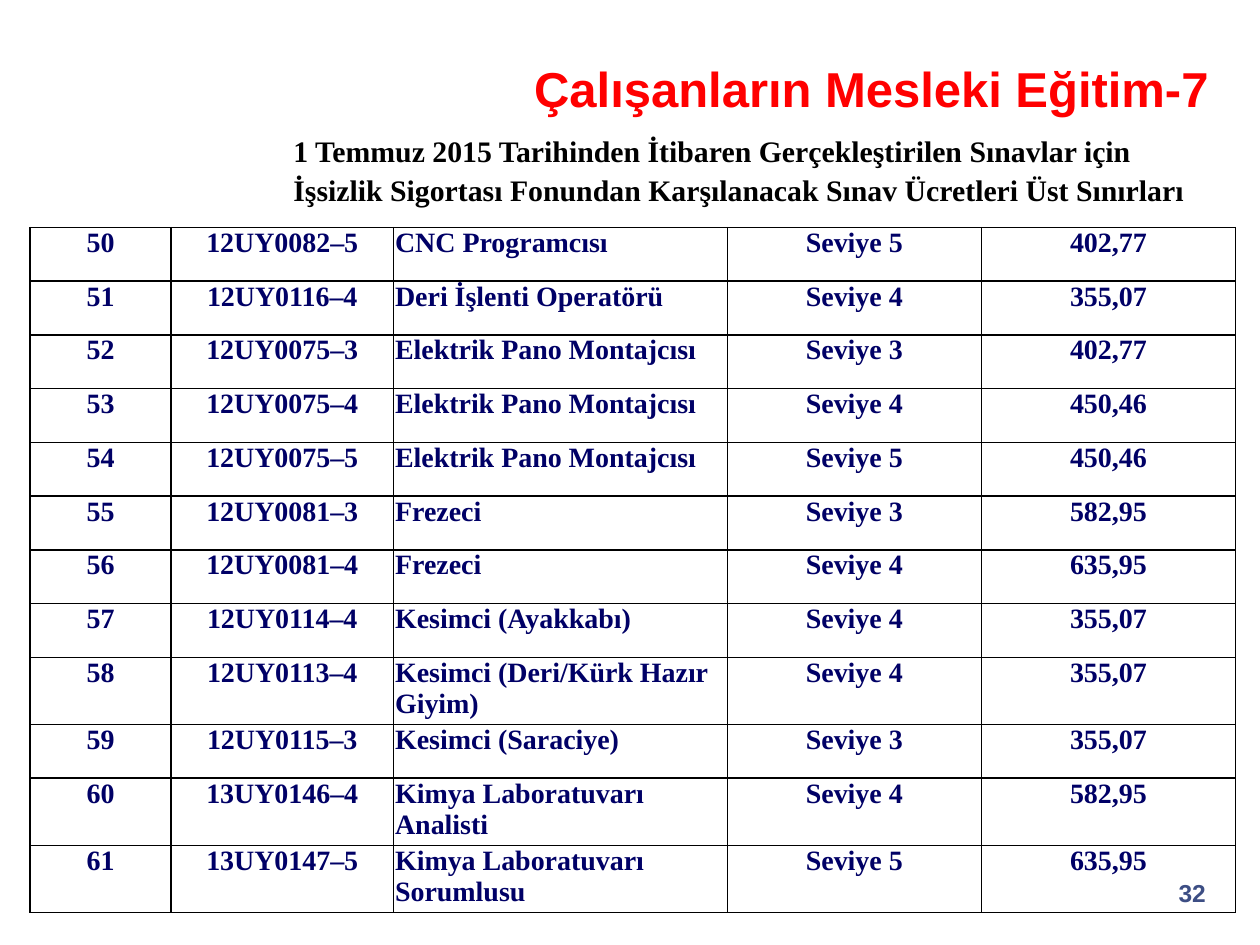
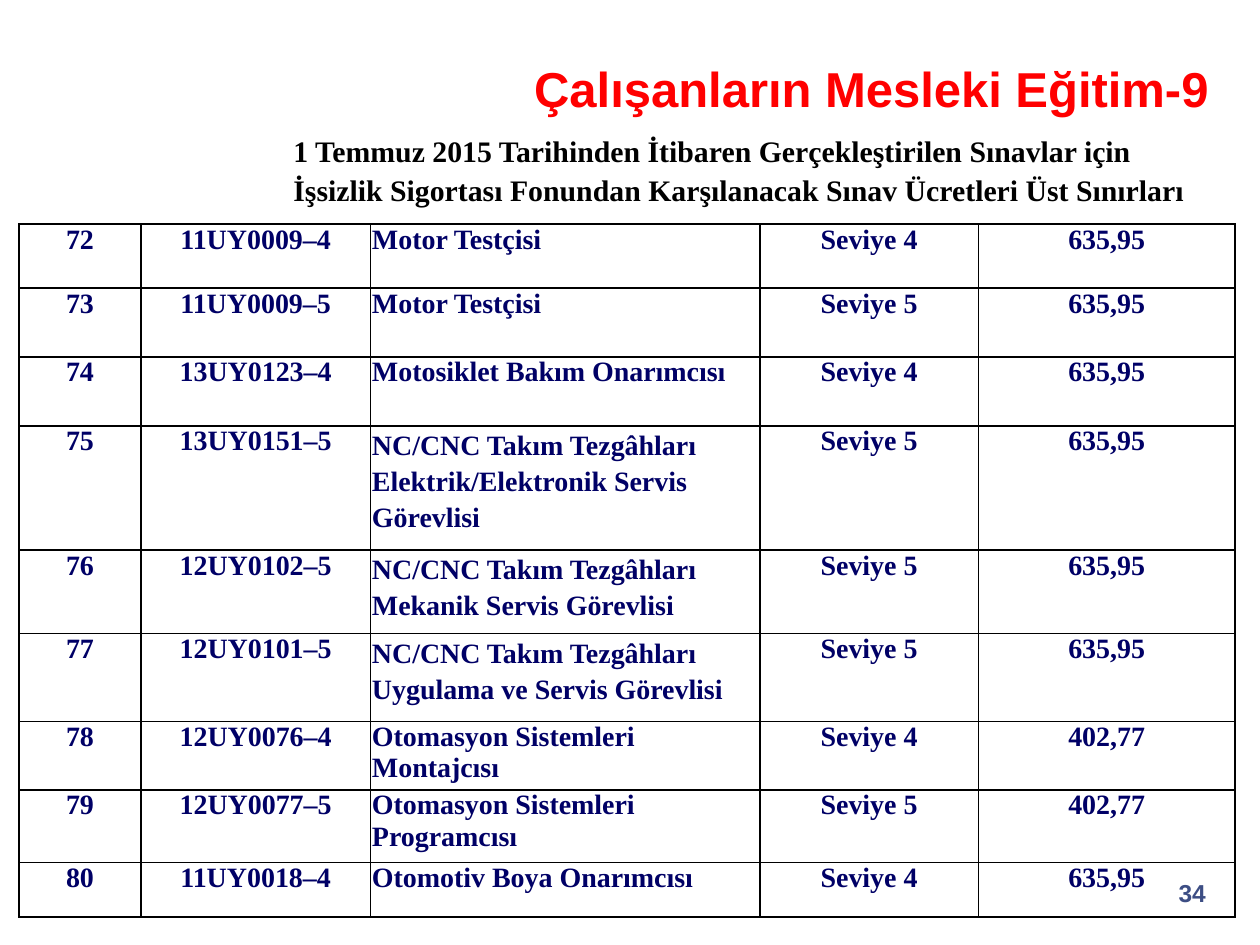
from dataclasses import dataclass

from lxml.etree import SubElement
from pptx import Presentation
from pptx.dml.color import RGBColor
from pptx.enum.text import MSO_ANCHOR, PP_ALIGN
from pptx.oxml.ns import qn
from pptx.slide import Slide
from pptx.table import _Cell
from pptx.text.text import TextFrame
from pptx.util import Pt

RED = RGBColor(0xFF, 0x00, 0x00)
BLACK = RGBColor(0x00, 0x00, 0x00)
NAVY = RGBColor(0x00, 0x00, 0x66)
SLATE = RGBColor(0x3D, 0x4E, 0x84)
SANS = "Arial"
SERIF = "Times New Roman"
SUBTITLE = (
    "1 Temmuz 2015 Tarihinden İtibaren Gerçekleştirilen Sınavlar için "
    "İşsizlik Sigortası Fonundan Karşılanacak Sınav Ücretleri Üst Sınırları"
)
JOB_COLUMN = 2


@dataclass(frozen=True)
class Exam:
    number: int
    code: str
    job: str
    level: int
    fee: str
    height: float = 30.7
    job_spacing: float = 1.0

    def texts(self) -> list[str]:
        return [str(self.number), self.code, self.job, f"Seviye {self.level}", self.fee]


@dataclass(frozen=True)
class FeePage:
    title_number: int
    page_number: int
    left: float
    top: float
    widths: list[float]
    exams: list[Exam]


PAGES = [
    FeePage(7, 32, 17.2, 130, [80.6, 127, 190.8, 145.2, 145.2], [
        Exam(50, "12UY0082–5", "CNC Programcısı", 5, "402,77"),
        Exam(51, "12UY0116–4", "Deri İşlenti Operatörü", 4, "355,07"),
        Exam(52, "12UY0075–3", "Elektrik Pano Montajcısı", 3, "402,77"),
        Exam(53, "12UY0075–4", "Elektrik Pano Montajcısı", 4, "450,46"),
        Exam(54, "12UY0075–5", "Elektrik Pano Montajcısı", 5, "450,46"),
        Exam(55, "12UY0081–3", "Frezeci", 3, "582,95"),
        Exam(56, "12UY0081–4", "Frezeci", 4, "635,95"),
        Exam(57, "12UY0114–4", "Kesimci (Ayakkabı)", 4, "355,07"),
        Exam(58, "12UY0113–4", "Kesimci (Deri/Kürk Hazır Giyim)", 4, "355,07", 38.4),
        Exam(59, "12UY0115–3", "Kesimci (Saraciye)", 3, "355,07"),
        Exam(60, "13UY0146–4", "Kimya Laboratuvarı Analisti", 4, "582,95", 38.4),
        Exam(61, "13UY0147–5", "Kimya Laboratuvarı Sorumlusu", 5, "635,95", 38.4),
    ]),
    FeePage(9, 34, 10.8, 128, [69.8, 131, 222.6, 125, 146.5], [
        Exam(72, "11UY0009–4", "Motor Testçisi", 4, "635,95", 36.6),
        Exam(73, "11UY0009–5", "Motor Testçisi", 5, "635,95", 39.4),
        Exam(74, "13UY0123–4", "Motosiklet Bakım Onarımcısı", 4, "635,95", 39.4),
        Exam(75, "13UY0151–5", "NC/CNC Takım Tezgâhları Elektrik/Elektronik Servis Görevlisi",
             5, "635,95", 71, 1.15),
        Exam(76, "12UY0102–5", "NC/CNC Takım Tezgâhları Mekanik Servis Görevlisi",
             5, "635,95", 47.8, 1.15),
        Exam(77, "12UY0101–5", "NC/CNC Takım Tezgâhları Uygulama ve Servis Görevlisi",
             5, "635,95", 50.3, 1.15),
        Exam(78, "12UY0076–4", "Otomasyon Sistemleri Montajcısı", 4, "402,77", 39),
        Exam(79, "12UY0077–5", "Otomasyon Sistemleri Programcısı", 5, "402,77", 41.5),
        Exam(80, "11UY0018–4", "Otomotiv Boya Onarımcısı", 4, "635,95", 31),
    ]),
]


def write(frame: TextFrame, text: str, *, size: float, font: str, color: RGBColor,
          align: PP_ALIGN = PP_ALIGN.LEFT, spacing: float = 1.0) -> None:
    frame.word_wrap = True
    paragraph = frame.paragraphs[0]
    paragraph.alignment = align
    paragraph.line_spacing = spacing
    run = paragraph.add_run()
    run.text = text
    run.font.size = Pt(size)
    run.font.name = font
    run.font.bold = True
    run.font.color.rgb = color


def add_frame(slide: Slide, left: float, top: float, width: float, height: float) -> TextFrame:
    return slide.shapes.add_textbox(Pt(left), Pt(top), Pt(width), Pt(height)).text_frame


def outline(cell: _Cell) -> None:
    properties = cell._tc.get_or_add_tcPr()
    for side in ("a:lnL", "a:lnR", "a:lnT", "a:lnB"):
        border = SubElement(properties, qn(side), w=str(Pt(1)))
        fill = SubElement(border, qn("a:solidFill"))
        SubElement(fill, qn("a:srgbClr"), val=str(BLACK))


def format_cell(cell: _Cell, text: str, is_job: bool, spacing: float) -> None:
    cell.margin_left = Pt(1) if is_job else 0
    cell.margin_right = cell.margin_top = cell.margin_bottom = 0
    outline(cell)
    cell.fill.background()
    write(cell.text_frame, text, size=16, font=SERIF, color=NAVY,
          align=PP_ALIGN.LEFT if is_job else PP_ALIGN.CENTER,
          spacing=spacing if is_job else 1.0)


def add_fees(slide: Slide, page: FeePage) -> None:
    fees = slide.shapes.add_table(
        len(page.exams), len(page.widths), Pt(page.left), Pt(page.top),
        Pt(sum(page.widths)), Pt(sum(exam.height for exam in page.exams))).table
    fees.first_row = fees.horz_banding = False
    for column, width in zip(fees.columns, page.widths):
        column.width = Pt(width)
    for row, exam in zip(fees.rows, page.exams):
        row.height = Pt(exam.height)
        for index, text in enumerate(exam.texts()):
            format_cell(row.cells[index], text, index == JOB_COLUMN, exam.job_spacing)


def add_page(presentation: Presentation, page: FeePage) -> None:
    slide = presentation.slides.add_slide(presentation.slide_layouts[6])
    title = add_frame(slide, 244, 30.2, 461.6, 40.3)
    title.vertical_anchor = MSO_ANCHOR.MIDDLE
    title.margin_right = Pt(15)
    write(title, f"Çalışanların Mesleki Eğitim-{page.title_number}", size=28, font=SANS,
          color=RED, align=PP_ALIGN.RIGHT)
    page_number = add_frame(slide, 655.2, 498.2, 41, 36)
    write(page_number, str(page.page_number), size=14, font=SANS, color=SLATE,
          align=PP_ALIGN.RIGHT)
    subtitle = add_frame(slide, 160.6, 70.6, 545, 48.2)
    write(subtitle, SUBTITLE, size=17, font=SERIF, color=BLACK, spacing=1.09)
    add_fees(slide, page)


def main() -> None:
    presentation = Presentation()
    presentation.slide_width = Pt(720)
    presentation.slide_height = Pt(540)
    for page in PAGES:
        add_page(presentation, page)
    presentation.save("out.pptx")


if __name__ == "__main__":
    main()
